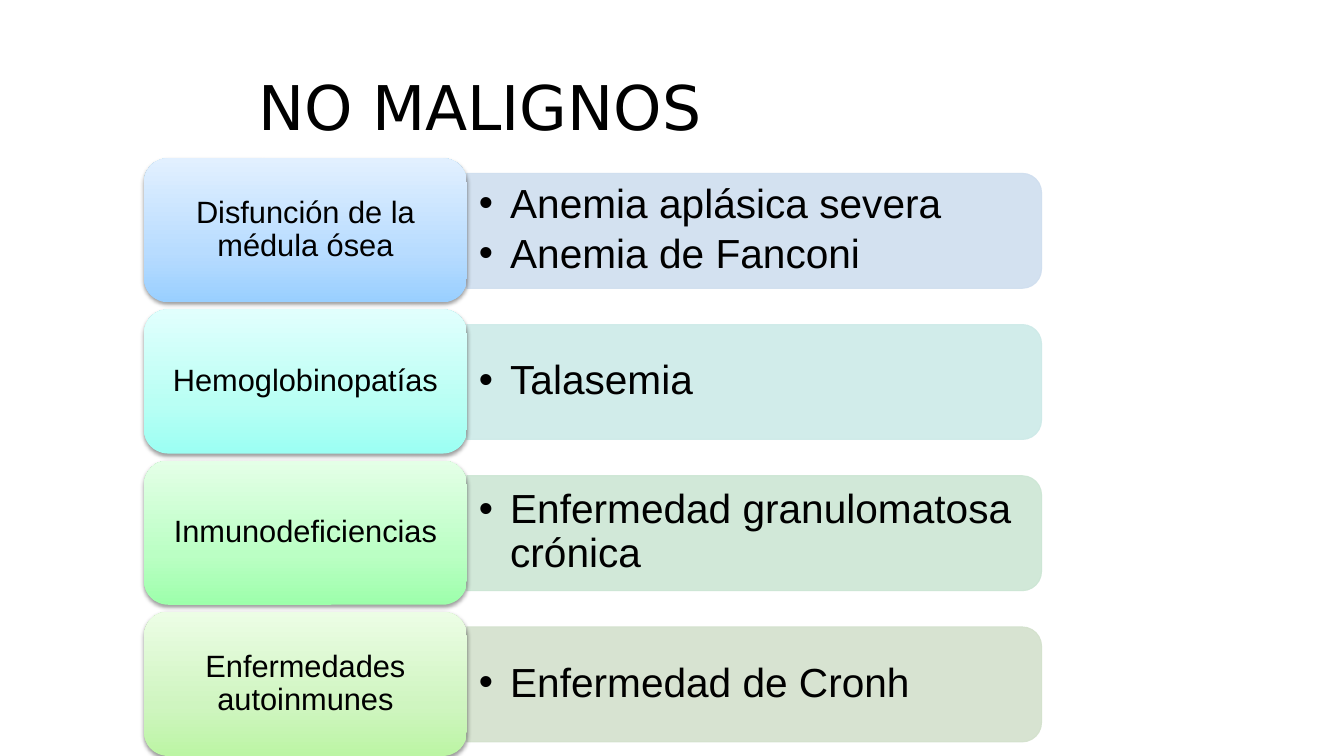
from copy import deepcopy
from dataclasses import dataclass
from typing import Any

from lxml.etree import SubElement
from pptx import Presentation
from pptx.dml.color import RGBColor
from pptx.enum.shapes import MSO_SHAPE
from pptx.enum.text import MSO_ANCHOR, MSO_AUTO_SIZE, PP_ALIGN
from pptx.oxml.ns import qn
from pptx.util import Emu, Pt

PX = 9144
BLACK = "000000"
CARD_LEFT, CARD_TOP, CARD_W, CARD_H = 143, 157, 320, 143
ROW_PITCH = 150
BAR_LEFT, BAR_W, BAR_H, BAR_DROP = 463, 570, 114, 15
BODY_W, BODY_H, BODY_DROP = 563, 103, 20
INDENT = 31


@dataclass
class Row:
    name: str
    diseases: list[str]
    bar: str
    stops: tuple[str, str, str]


ROWS = [
    Row("Disfunción de la médula ósea", ["Anemia aplásica severa", "Anemia de Fanconi"],
        "CFDEEF", ("99CFFF", "B8DCFF", "E2F0FF")),
    Row("Hemoglobinopatías", ["Talasemia"],
        "CDEAE8", ("9BFFF3", "B9FFF4", "E1FFFD")),
    Row("Inmunodeficiencias", ["Enfermedad granulomatosa crónica"],
        "CCE6D4", ("9DFFAB", "BBFFC4", "E4FFE7")),
    Row("Enfermedades autoinmunes", ["Enfermedad de Cronh"],
        "D3E1CC", ("BCF5A4", "CFF5C0", "ECFDE5")),
]


def px(n: float) -> Emu:
    return Emu(round(n * PX))


def rgb(color: str) -> RGBColor:
    return RGBColor.from_string(color)


def set_attrs(obj: Any, values: dict[str, Any]) -> None:
    for key, value in values.items():
        setattr(obj, key, value)


def set_frame(tf: Any, inset_x: int, inset_y: int) -> None:
    set_attrs(tf, {
        "word_wrap": True, "auto_size": MSO_AUTO_SIZE.NONE,
        "vertical_anchor": MSO_ANCHOR.MIDDLE,
        "margin_left": px(inset_x), "margin_right": px(inset_x),
        "margin_top": px(inset_y), "margin_bottom": px(inset_y),
    })


def write(p: Any, text: str, size: int, align: PP_ALIGN, font: str = "Arial") -> None:
    set_attrs(p, {"alignment": align, "line_spacing": 0.9, "space_before": Pt(0)})
    r = p.add_run()
    r.text = text
    set_attrs(r.font, {"name": font, "size": Pt(size)})
    r.font.color.rgb = rgb(BLACK)


def add_alpha(parent: Any, percent: int) -> None:
    for clr in parent.iter(qn("a:srgbClr")):
        SubElement(clr, qn("a:alpha"), val=str(percent * 1000))


def add_bar(slide: Any, row: Row, top: int) -> None:
    shift = (BAR_W - BAR_H) / 2
    sp = slide.shapes.add_shape(MSO_SHAPE.ROUND_2_SAME_RECTANGLE, px(BAR_LEFT + shift),
                                px(top - shift), px(BAR_H), px(BAR_W))
    sp.rotation = 90
    sp.adjustments[0] = 0.167
    sp.shadow.inherit = False
    sp.fill.solid()
    sp.fill.fore_color.rgb = rgb(row.bar)
    sp.line.color.rgb = rgb(row.bar)
    sp.line.width = Pt(0.75)
    add_alpha(sp._element.spPr, 90)


def add_bullet(p: Any) -> None:
    p.level = 1
    pPr = p._p.get_or_add_pPr()
    pPr.set("marL", str(px(INDENT)))
    pPr.set("indent", str(px(-INDENT)))
    SubElement(SubElement(pPr, qn("a:buClr")), qn("a:srgbClr"), val=BLACK)
    SubElement(pPr, qn("a:buFont"), typeface="Arial")
    SubElement(pPr, qn("a:buChar"), char="•")


def add_diseases(slide: Any, row: Row, top: int) -> None:
    tf = slide.shapes.add_textbox(px(BAR_LEFT), px(top), px(BODY_W), px(BODY_H)).text_frame
    set_frame(tf, 12, 6)
    for i, disease in enumerate(row.diseases):
        p = tf.add_paragraph() if i else tf.paragraphs[0]
        add_bullet(p)
        write(p, disease, 29, PP_ALIGN.LEFT)
        if i:
            p.space_before = Pt(4.3)


def add_card(slide: Any, row: Row, top: int) -> None:
    sp = slide.shapes.add_shape(MSO_SHAPE.ROUNDED_RECTANGLE, px(CARD_LEFT), px(top),
                                px(CARD_W), px(CARD_H))
    sp.adjustments[0] = 0.167
    sp.fill.gradient()
    sp.fill.gradient_angle = 90
    stop_list = sp._element.spPr.find(".//" + qn("a:gsLst"))
    stop_list.append(deepcopy(stop_list[-1]))
    for stop, position, color in zip(sp.fill.gradient_stops, (0, 0.35, 1), row.stops):
        stop.position = position
        stop.color.rgb = rgb(color)
    sp.line.fill.background()
    sp.shadow.inherit = False
    effects = sp._element.spPr.find(qn("a:effectLst"))
    shadow = SubElement(effects, qn("a:outerShdw"), blurRad=str(Pt(3.1)), dist=str(Pt(1.6)),
                        dir="5400000", rotWithShape="0")
    SubElement(shadow, qn("a:srgbClr"), val=BLACK)
    add_alpha(shadow, 38)
    set_frame(sp.text_frame, 16, 12)
    write(sp.text_frame.paragraphs[0], row.name, 22, PP_ALIGN.CENTER)


def add_title(slide: Any, text: str) -> None:
    sp = slide.shapes.title
    set_attrs(sp, {"left": px(246), "top": px(37), "width": px(536), "height": px(145)})
    set_frame(sp.text_frame, 10, 5)
    write(sp.text_frame.paragraphs[0], text, 44, PP_ALIGN.LEFT, "DejaVu Sans")


def main() -> None:
    prs = Presentation()
    set_attrs(prs, {"slide_width": px(1333), "slide_height": px(750)})
    slide = prs.slides.add_slide(prs.slide_layouts[5])
    add_title(slide, "NO MALIGNOS")
    for i, row in enumerate(ROWS):
        top = CARD_TOP + i * ROW_PITCH
        add_bar(slide, row, top + BAR_DROP)
        add_diseases(slide, row, top + BODY_DROP)
        add_card(slide, row, top)
    prs.save("out.pptx")


if __name__ == "__main__":
    main()
